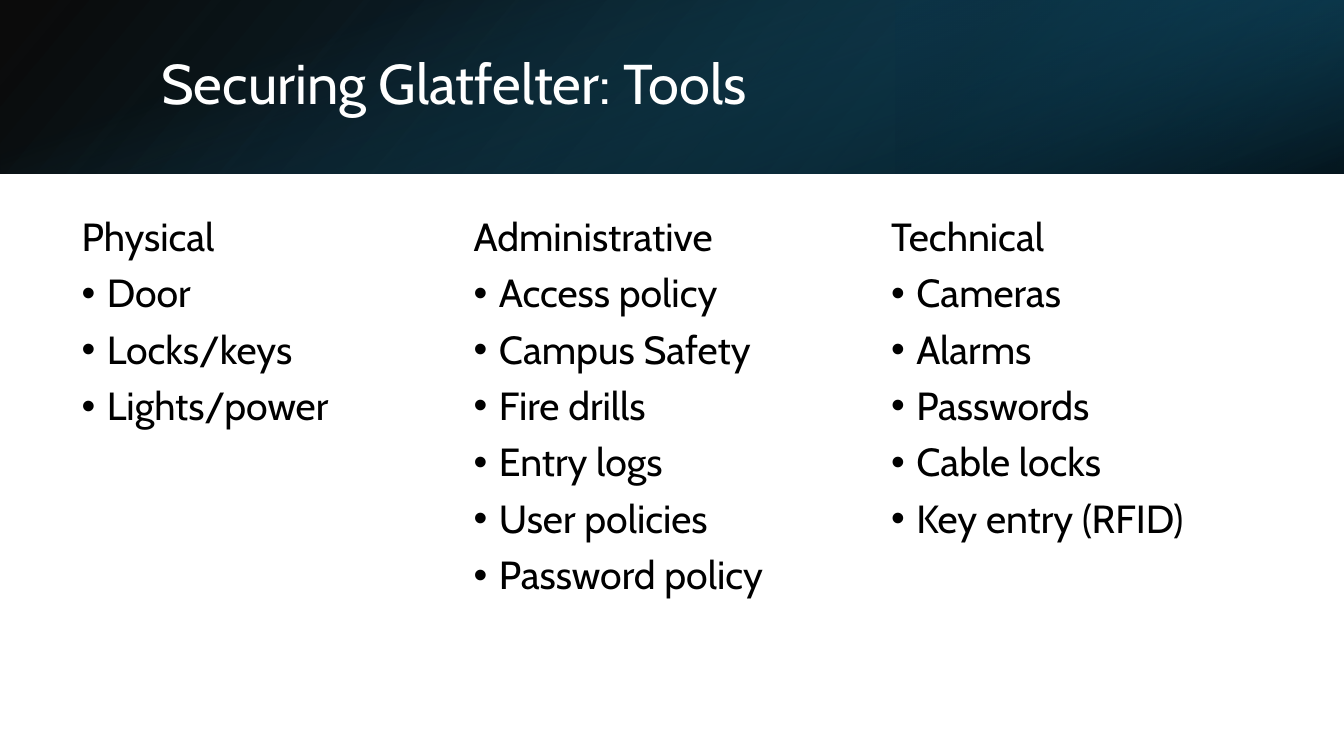
"""Build a slide that sorts security tools into three columns."""
from lxml.etree import SubElement as Sub
from pptx import Presentation as Deck
from pptx.dml.color import RGBColor as Rgb
from pptx.enum.shapes import MSO_SHAPE as Form
from pptx.enum.text import MSO_ANCHOR as Anchor, MSO_AUTO_SIZE as Auto, PP_ALIGN as Align
from pptx.oxml.ns import qn
from pptx.util import Inches, Pt

WIDE, HIGH = 13.33, 7.5
BAND = 0.23 * HIGH
HUES = {"ink": "000000", "page": "FFFFFF", "deep": "104862", "night": "0B3041", "teal": "156082"}
FACE = "Cabin"
TOP, SPAN, DEPTH = 2.11, 3.61, 4.76
LISTS = [
    (0.71, "Physical", ["Door", "Locks/keys", "Lights/power"]),
    (4.6, "Administrative", ["Access policy", "Campus Safety", "Fire drills",
                             "Entry logs", "User policies", "Password policy"]),
    (8.74, "Technical", ["Cameras", "Alarms", "Passwords", "Cable locks", "Key entry (RFID)"]),
]


def place(shape, left, top, width, height):
    """Move and size a shape, in inches."""
    shape.left, shape.top = Inches(left), Inches(top)
    shape.width, shape.height = Inches(width), Inches(height)


def blend(slide, box, stops, angle, turn=0, flip=False):
    """Add a rectangle filled with a two-stop, see-through gradient."""
    rect = slide.shapes.add_shape(Form.RECTANGLE, *map(Inches, box))
    rect.shadow.inherit = False
    rect.line.fill.background()
    rect.rotation = turn
    if flip:
        rect._element.spPr.xfrm.set("flipH", "1")
    rect.fill.gradient()
    rect.fill.gradient_angle = 360 - angle
    for stop, (spot, hue, _) in zip(rect.fill.gradient_stops, stops):
        stop.position = spot / 100
        stop.color.rgb = Rgb.from_string(HUES[hue])
    tints = rect._element.spPr.iter(qn("a:srgbClr"))
    for tint, (_, _, alpha) in zip(tints, stops):
        Sub(tint, qn("a:alpha"), val=str(alpha * 1000))


def style(para, size, hue):
    """Set the font and line spacing of a paragraph."""
    para.line_spacing = 0.9
    para.alignment = Align.LEFT
    para.font.name, para.font.size = FACE, Pt(size)
    para.font.color.rgb = Rgb.from_string(HUES[hue])


def mark(para, dot):
    """Give a paragraph a hanging bullet, or none."""
    props = para._p.get_or_add_pPr()
    inset = Inches(0.25) if dot else 0
    props.set("marL", str(inset))
    props.set("indent", str(-inset))
    if dot:
        Sub(props, qn("a:buFont"), typeface="Arial")
        Sub(props, qn("a:buChar"), char="•")
    else:
        Sub(props, qn("a:buNone"))


def title(shape, text):
    """Fill the title placeholder."""
    place(shape, 1.5, 0.38, 10.98, 0.96)
    frame = shape.text_frame
    frame.text = text
    frame.auto_size, frame.vertical_anchor = Auto.NONE, Anchor.MIDDLE
    style(frame.paragraphs[0], 40, "page")


def column(shape, left, head, items):
    """Fill a text shape with a heading and its bullets."""
    place(shape, left, TOP, SPAN, DEPTH)
    frame = shape.text_frame
    frame.text = "\n".join([head, *items])
    frame.word_wrap, frame.auto_size = True, Auto.NONE
    frame.vertical_anchor = Anchor.TOP
    for row, para in enumerate(frame.paragraphs):
        mark(para, row > 0)
        para.space_before = Pt(10)
        style(para, 28, "ink")


def main():
    """Build and save the slide."""
    deck = Deck()
    deck.slide_width, deck.slide_height = Inches(WIDE), Inches(HIGH)
    slide = deck.slides.add_slide(deck.slide_layouts[1])
    shapes = slide.shapes
    head, body = slide.placeholders
    blend(slide, (0, 0, WIDE, BAND), [(0, "ink", 96), (100, "deep", 100)], 140, flip=True)
    blend(slide, (WIDE * 2 / 3, 0, WIDE / 3, BAND),
          [(19, "night", 68), (100, "teal", 79)], 320, turn=180, flip=True)
    blend(slide, ((WIDE - BAND) / 2, (BAND - WIDE) / 2, BAND, WIDE),
          [(23, "teal", 0), (99, "ink", 74)], 340, turn=90)
    for holder in (head, body):
        shapes._spTree.append(holder._element)
    title(head, "Securing Glatfelter: Tools")
    boxes = [body] + [shapes.add_textbox(0, 0, 0, 0) for _ in LISTS[1:]]
    for box, entry in zip(boxes, LISTS):
        column(box, *entry)
    deck.save("out.pptx")


if __name__ == "__main__":
    main()
